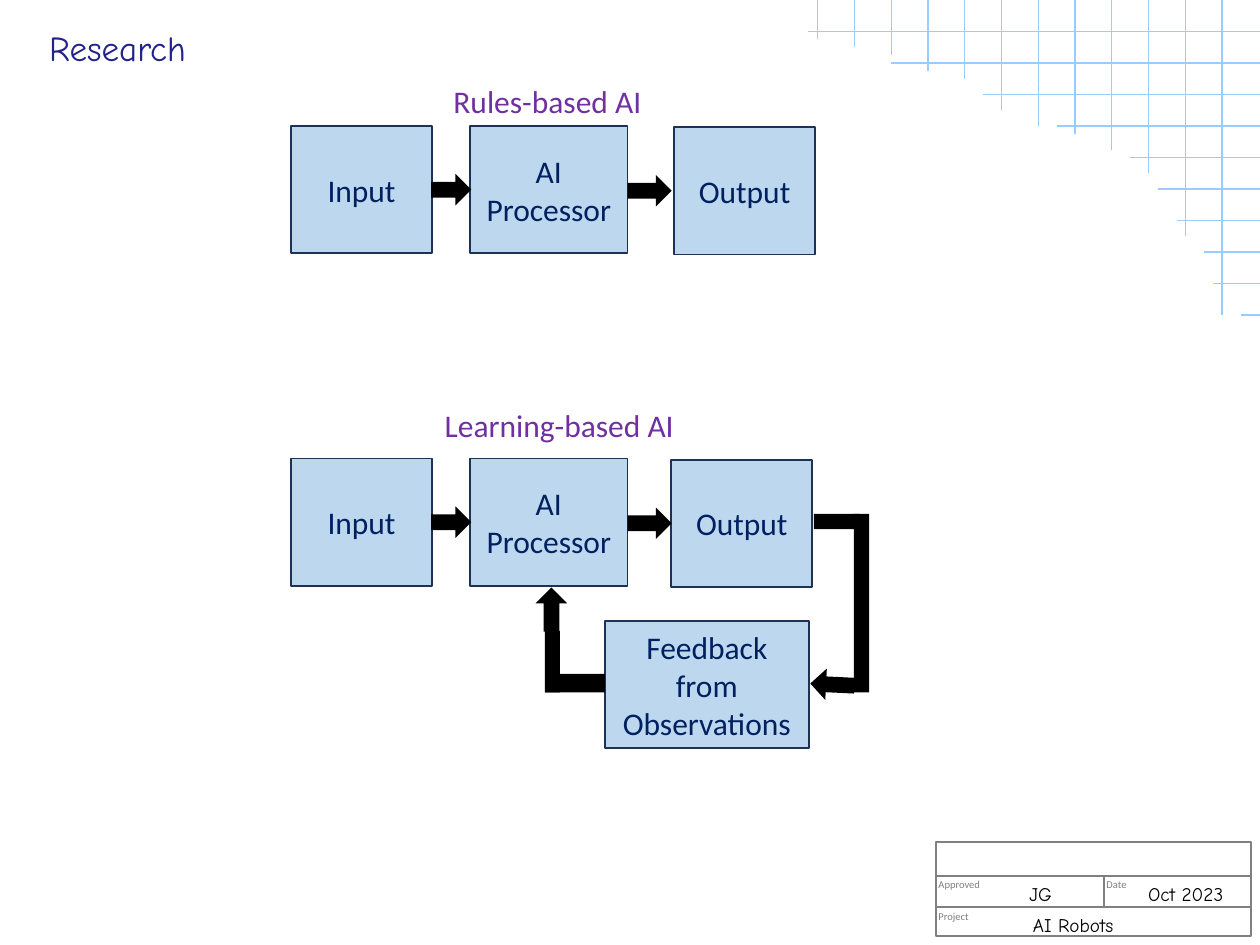
from lxml import etree
from pptx import Presentation
from pptx.dml.color import RGBColor
from pptx.enum.shapes import MSO_CONNECTOR, MSO_SHAPE
from pptx.enum.text import MSO_ANCHOR, MSO_AUTO_SIZE, PP_ALIGN
from pptx.oxml.ns import qn
from pptx.util import Pt

GRID_BLUE = RGBColor(0x99, 0xCC, 0xFF)
TITLE_BLUE = RGBColor(0x22, 0x22, 0x8B)
GREY = RGBColor(0x80, 0x80, 0x80)
BLACK = RGBColor(0, 0, 0)
BOX_FILL = RGBColor(0xBD, 0xD7, 0xEE)
BOX_LINE = RGBColor(0x1E, 0x32, 0x56)
BOX_TEXT = RGBColor(0x00, 0x20, 0x60)
PURPLE = RGBColor(0x70, 0x30, 0xA0)

BODY, HAND = "Calibri", "Comic Neue"
BOX_H = 72.7


def set_font(p, name, size, color):
    p.font.name, p.font.size = name, Pt(size)
    p.font.color.rgb = color


def add_line(s, x1, y1, x2, y2, color, width):
    sp = s.shapes.add_connector(
        MSO_CONNECTOR.STRAIGHT, Pt(x1), Pt(y1), Pt(x2), Pt(y2))
    sp.line.color.rgb, sp.line.width = color, Pt(width)
    etree.SubElement(sp._element.spPr, qn("a:effectLst"))


def add_label(s, text, x, y, w, h, name, size, color, align=PP_ALIGN.LEFT):
    tf = s.shapes.add_textbox(Pt(x), Pt(y), Pt(w), Pt(h)).text_frame
    tf.word_wrap = False
    tf.auto_size = MSO_AUTO_SIZE.SHAPE_TO_FIT_TEXT
    tf.text = text
    tf.paragraphs[0].alignment = align
    set_font(tf.paragraphs[0], name, size, color)


def add_solid(s, x, y, w, h, kind=MSO_SHAPE.RECTANGLE, rotation=0):
    """Black bar or arrow without outline."""
    sp = s.shapes.add_shape(kind, Pt(x), Pt(y), Pt(w), Pt(h))
    sp.shadow.inherit = False
    sp.fill.solid()
    sp.fill.fore_color.rgb = BLACK
    sp.line.fill.background()
    sp.rotation = rotation


def add_box(s, text, x, y, w):
    sp = s.shapes.add_shape(
        MSO_SHAPE.RECTANGLE, Pt(x), Pt(y), Pt(w), Pt(BOX_H))
    sp.shadow.inherit = False
    sp.fill.solid()
    sp.fill.fore_color.rgb = BOX_FILL
    sp.line.color.rgb, sp.line.width = BOX_LINE, Pt(1)
    tf = sp.text_frame
    tf.vertical_anchor = MSO_ANCHOR.MIDDLE
    tf.text = text
    for p in tf.paragraphs:
        p.alignment = PP_ALIGN.CENTER
        set_font(p, BODY, 18, BOX_TEXT)


def add_title(s, text, x, y, w, h):
    sp = s.shapes.title
    sp.left, sp.top, sp.width, sp.height = Pt(x), Pt(y), Pt(w), Pt(h)
    tf = sp.text_frame
    tf.text = text
    tf.auto_size = MSO_AUTO_SIZE.NONE
    tf.vertical_anchor = MSO_ANCHOR.MIDDLE
    tf.paragraphs[0].alignment = PP_ALIGN.LEFT
    set_font(tf.paragraphs[0], HAND, 20, TITLE_BLUE)


def add_corner_grid(s, left, top, right):
    """Graph-paper lines that fade out from the top right corner."""
    drops = [22.5, 27, 31.5, 40.5, 45, 63, 72, 76.5, 85.5, 99, 135, 180]
    for i, drop in enumerate(drops):
        x = left + 21 * i
        add_line(s, x, top, x, top + drop, GRID_BLUE, 0.75)
    lengths = [258.5, 211, 158.4, 116, 74.2, 58.3, 47.5, 31.7, 26.6, 10.8]
    for i, length in enumerate(lengths, 1):
        y = top + 18 * i
        add_line(s, right, y, right - length, y, GRID_BLUE, 0.75)


def add_flow(s, x, y, output_dx):
    """Input -> AI Processor -> Output."""
    add_box(s, "Input", x, y, 80.6)
    add_box(s, "AI\nProcessor", x + 102.3, y, 90)
    add_box(s, "Output", x + output_dx, y + 0.7, 80.6)
    add_solid(s, x + 80, y + 27.4, 23, 18, MSO_SHAPE.RIGHT_ARROW)
    add_solid(s, x + 192.3, y + 28, 25.2, 18, MSO_SHAPE.RIGHT_ARROW)


def add_feedback(s, x, y):
    """Loop from Output back to AI Processor, below the flow at x, y."""
    add_box(s, "Feedback from Observations", x + 179.3, y + 92.9, 116.6)
    # Arrow heads
    add_solid(s, x + 136.2, y + 77.3, 25.2, 18, MSO_SHAPE.RIGHT_ARROW, 270)
    add_solid(s, x + 296.7, y + 120.2, 25.2, 18, MSO_SHAPE.RIGHT_ARROW, 182.8)
    # Right-hand path, then left-hand path
    add_solid(s, x + 298.8, y + 31.7, 26, 8.8)
    add_solid(s, x + 321.6, y + 31.7, 8.8, 102)
    add_solid(s, x + 145.2, y + 123, 34.1, 10.7)
    add_solid(s, x + 145, y + 98.5, 8.6, 35.2)


def add_title_block(s, x, y, w, h):
    """Drawing-sheet block with approval, date and project."""
    row1, row2, split = y + 19.5, y + 37.5, x + 96
    sp = s.shapes.add_shape(MSO_SHAPE.RECTANGLE, Pt(x), Pt(y), Pt(w), Pt(h))
    sp.shadow.inherit = False
    sp.fill.background()
    sp.line.color.rgb, sp.line.width = GREY, Pt(1)
    for row in (row1, row2):
        add_line(s, x, row, x + w, row, GREY, 1)
    add_line(s, split, row2, split, row1, GREY, 1)
    # Field names
    for text, left, top, width in [("Approved", x, row1, 38.9),
                                   ("Date", split, row1, 25.9),
                                   ("Project", x, row2, 31.7)]:
        add_label(s, text, left - 5.8, top - 2.2, width, 14.4, BODY, 6, GREY)
    # Field values
    for text, dx, top, width, align in [
            ("AI Robots", 48.2, row2, 67.7, PP_ALIGN.LEFT),
            ("JG", 46.1, row1, 29.5, PP_ALIGN.LEFT),
            ("Oct 2023", 110.2, row1, 64.8, PP_ALIGN.CENTER)]:
        add_label(s, text, x + dx, top, width, 20.6, HAND, 11, BLACK, align)


def main():
    prs = Presentation()
    prs.slide_width, prs.slide_height = Pt(720), Pt(540)
    s = prs.slides.add_slide(prs.slide_layouts[5])

    add_title(s, "Research", 20.9, 12.2, 486, 30.2)
    add_corner_grid(s, 467.3, 0, 720)
    add_title_block(s, 535, 481, 180, 54)

    # Rules-based diagram
    add_label(s, "Rules-based AI", 252, 43.2, 123, 29, BODY, 18, PURPLE)
    add_flow(s, 166.3, 72, 218.9)

    # Learning-based diagram
    add_label(s, "Learning-based AI", 247, 228.4, 151, 29, BODY, 18, PURPLE)
    add_flow(s, 166.3, 262, 217.3)
    add_feedback(s, 166.3, 262)

    prs.save("out.pptx")


if __name__ == "__main__":
    main()
